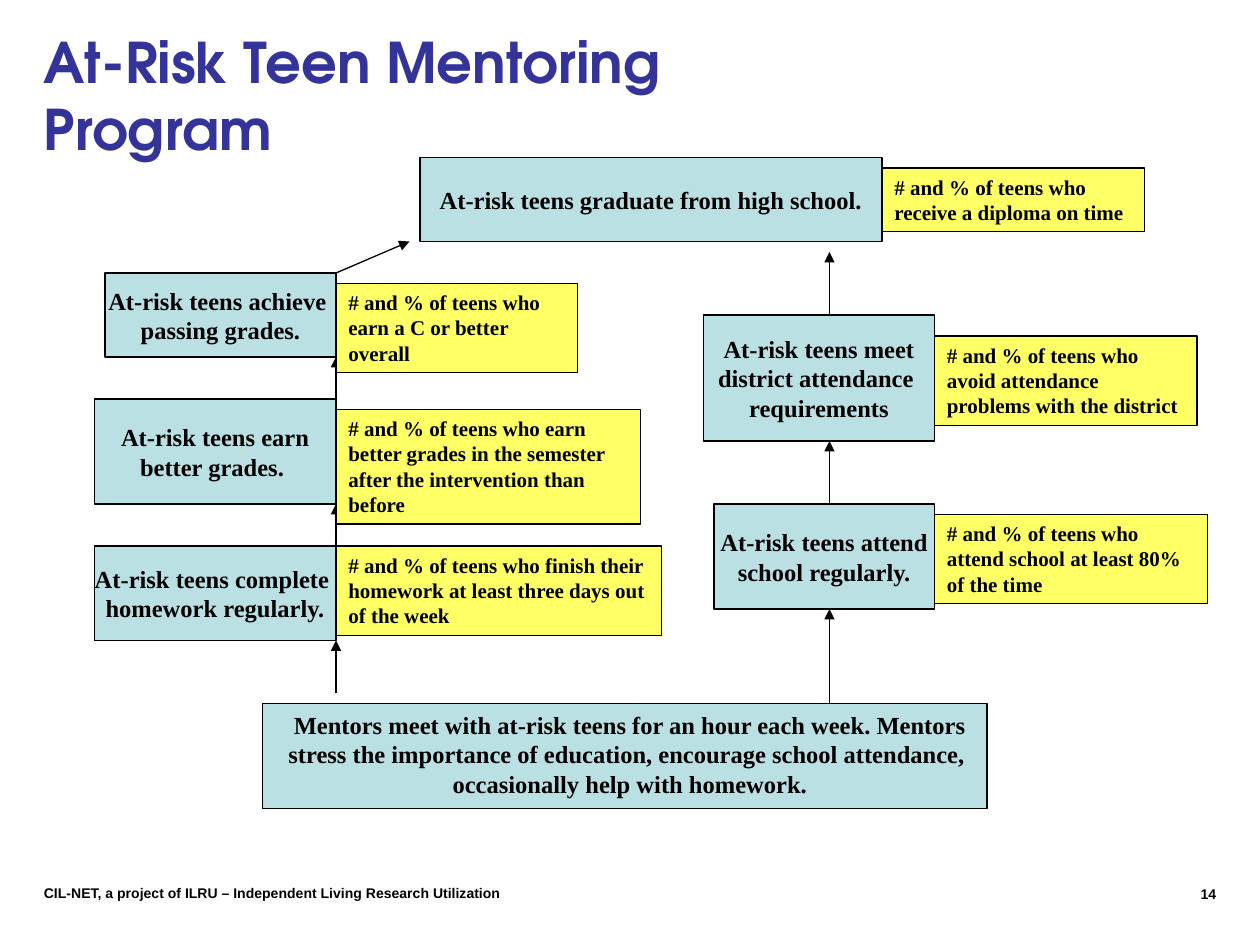
from lxml import etree
from pptx import Presentation
from pptx.dml.color import RGBColor
from pptx.enum.shapes import MSO_CONNECTOR, MSO_SHAPE
from pptx.enum.text import MSO_ANCHOR, PP_ALIGN
from pptx.oxml.ns import qn
from pptx.util import Pt

RECT, STRAIGHT = MSO_SHAPE.RECTANGLE, MSO_CONNECTOR.STRAIGHT
LEFT, CENTER, RIGHT = PP_ALIGN.LEFT, PP_ALIGN.CENTER, PP_ALIGN.RIGHT
TOP, MIDDLE = MSO_ANCHOR.TOP, MSO_ANCHOR.MIDDLE

BLACK, TITLE_BLUE, PALE_BLUE, YELLOW = "000000", "333399", "BBE0E3", "FFFF66"
SERIF, SANS, DISPLAY = "Times New Roman", "Arial", "TeX Gyre Adventor"


def rgb(value):
    return RGBColor.from_string(value)


class Diagram:
    """Holds the line style and the slide being drawn; lengths are in points."""

    line_width = Pt(0.75)

    def __init__(self, slide):
        self.slide = slide

    def set_text(self, sp, lines, size, font=SERIF, color=BLACK, align=LEFT,
                 anchor=TOP, wrap=True):
        tf = sp.text_frame
        tf.word_wrap = wrap
        tf.vertical_anchor = anchor
        tf.text = "\n".join(lines)
        for p in tf.paragraphs:
            p.alignment = align
            p.font.name, p.font.size, p.font.bold = font, Pt(size), True
            p.font.color.rgb = rgb(color)

    def text(self, box, lines, size, **style):
        sp = self.slide.shapes.add_textbox(*map(Pt, box))
        self.set_text(sp, lines, size, **style)

    def rect(self, box, fill):
        sp = self.slide.shapes.add_shape(RECT, *map(Pt, box))
        sp.shadow.inherit = False
        sp.fill.solid()
        sp.fill.fore_color.rgb = rgb(fill)
        sp.line.color.rgb = rgb(BLACK)
        sp.line.width = self.line_width
        return sp

    def outcome(self, box, *lines):
        self.set_text(self.rect(box, PALE_BLUE), lines, 14, align=CENTER,
                      anchor=MIDDLE, wrap=False)

    def indicator(self, box, line):
        self.set_text(self.rect(box, YELLOW), [line], 12)

    def arrow(self, x1, y1, x2, y2):
        c = self.slide.shapes.add_connector(STRAIGHT, *map(Pt, (x1, y1, x2, y2)))
        c.line.color.rgb = rgb(BLACK)
        c.line.width = self.line_width
        sp_pr = c._element.spPr
        etree.SubElement(sp_pr.find(qn("a:ln")), qn("a:tailEnd"), type="triangle")
        etree.SubElement(sp_pr, qn("a:effectLst"))


def main():
    prs = Presentation()
    prs.slide_width, prs.slide_height = Pt(720), Pt(540)
    d = Diagram(prs.slides.add_slide(prs.slide_layouts[6]))

    d.text((654, 502.5, 48, 19.5), ["14"], 8, font=SANS, align=RIGHT)
    d.text((18, 502, 360, 16.5),
           ["CIL-NET, a project of ILRU – Independent Living Research Utilization"],
           8, font=SANS)
    d.text((18, 30, 444, 48), ["At-Risk Teen Mentoring Program"], 32,
           font=DISPLAY, color=TITLE_BLUE, anchor=MIDDLE)

    d.rect((150, 402, 414, 60), PALE_BLUE)
    d.text((150, 402, 420, 58),
           ["Mentors meet with at-risk teens for an hour each week. Mentors stress "
            "the importance of education, encourage school attendance, ",
            "occasionally help with homework."], 14, align=CENTER)

    d.outcome((54, 312, 138, 54), "At-risk teens complete ", "homework regularly.")
    d.outcome((54, 228, 138, 60), "At-risk teens earn", "better grades. ")
    d.outcome((60, 156, 132, 48), "At-risk teens achieve ", "passing grades.")
    d.outcome((408, 288, 126, 60), "At-risk teens attend", "school regularly.")
    d.outcome((402, 180, 132, 72), "At-risk teens meet", "district attendance ",
              "requirements")
    d.outcome((240, 90, 264, 48), "At-risk teens graduate from high school.")

    grades_x, attendance_x = 192, 474
    for x, steps in ((grades_x, ((396, 366), (312, 288), (228, 204))),
                     (attendance_x, ((402, 348), (288, 252), (180, 144)))):
        for start, end in steps:
            d.arrow(x, start, x, end)
    d.arrow(grades_x, 156, 234, 138)

    two_lines, three_lines, four_lines = 36.5, 51, 65.5
    d.indicator((192, 312, 186, three_lines),
                "# and % of teens who finish their homework at least three days "
                "out of the week")
    d.indicator((192, 234, 174, four_lines),
                "# and % of teens who earn better grades in the semester after "
                "the intervention than before")
    d.indicator((192, 162, 138, three_lines),
                "# and % of teens who earn a C or better overall")
    d.indicator((534, 294, 156, three_lines),
                "# and % of teens who attend school at least 80% of the time")
    d.indicator((534, 192, 150, three_lines),
                "# and % of teens who avoid attendance problems with the district")
    d.indicator((504, 96, 150, two_lines),
                "# and % of teens who receive a diploma on time")

    prs.save("out.pptx")


if __name__ == "__main__":
    main()
